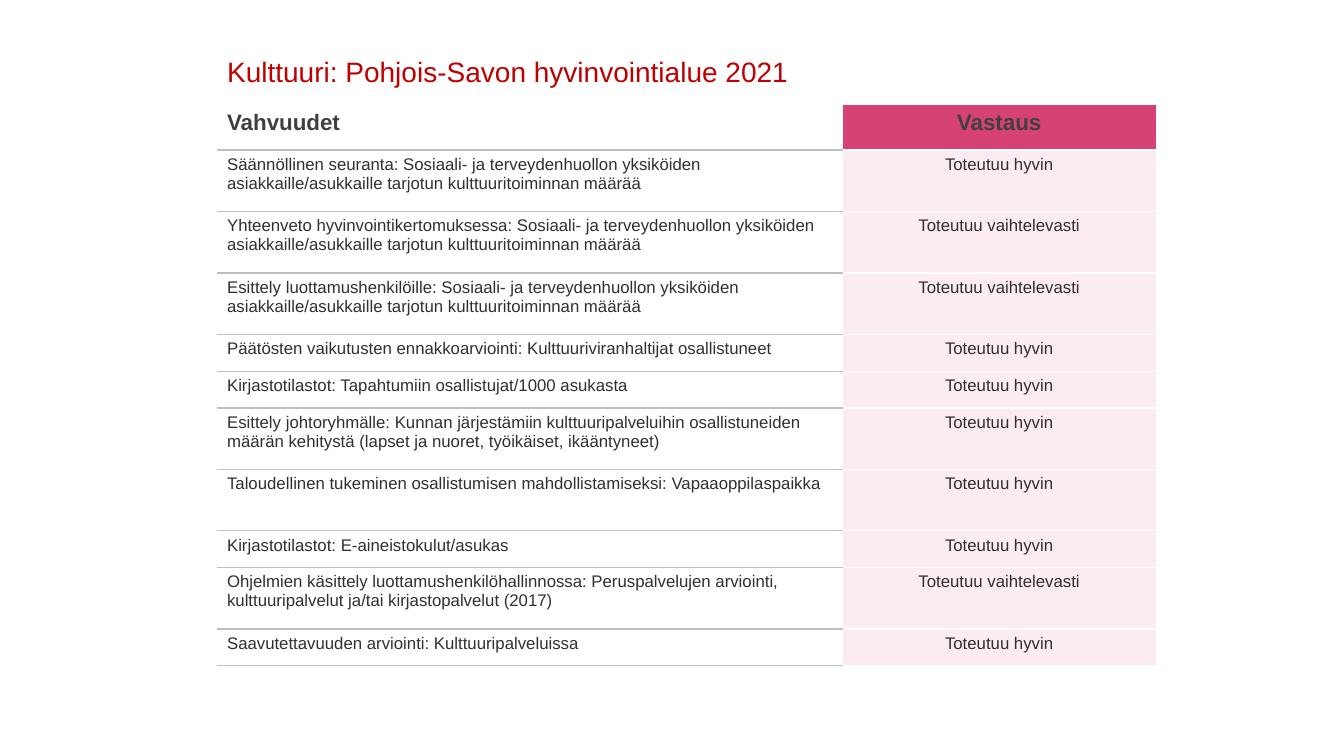
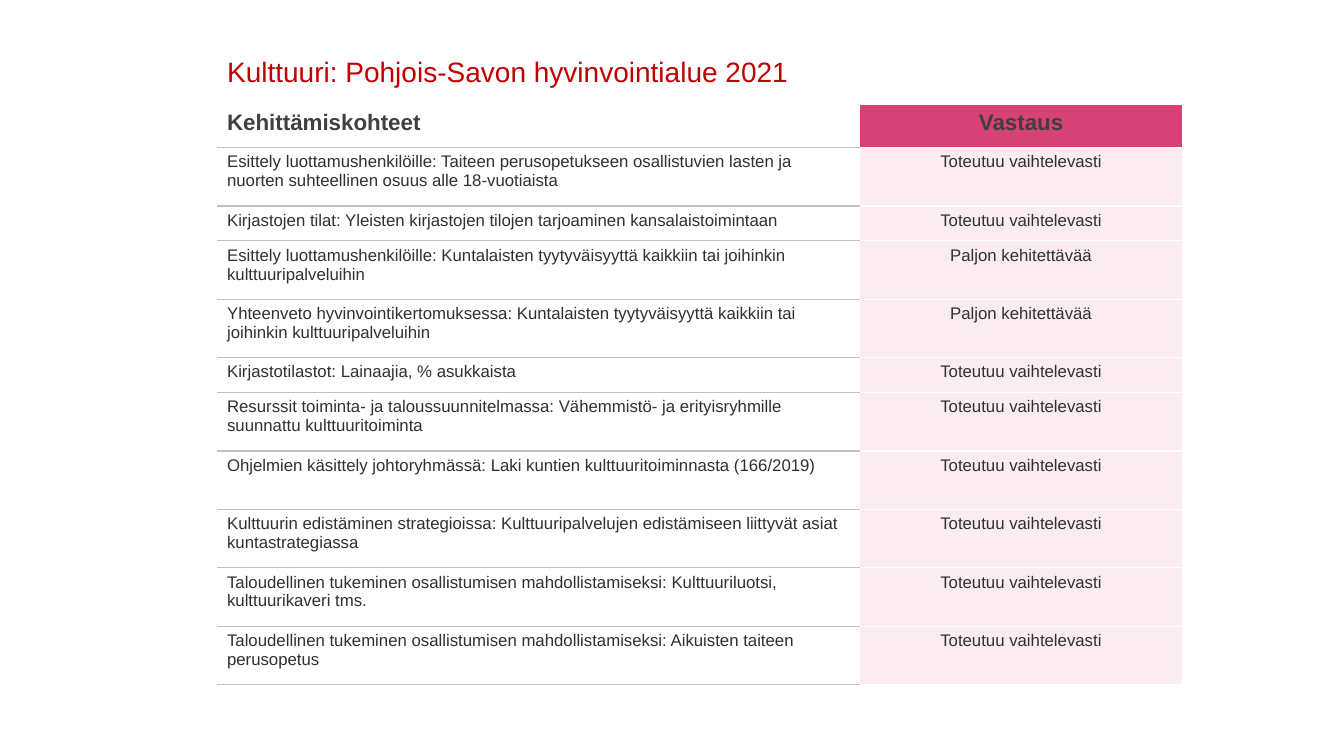
from lxml import etree
from pptx import Presentation
from pptx.dml.color import RGBColor
from pptx.enum.text import MSO_ANCHOR, MSO_AUTO_SIZE, PP_ALIGN
from pptx.oxml.ns import qn
from pptx.util import Pt

TOP, FIXED = MSO_ANCHOR.TOP, MSO_AUTO_SIZE.NONE
LEFT, CENTER = PP_ALIGN.LEFT, PP_ALIGN.CENTER

# Colours
RED = RGBColor(0xC0, 0x00, 0x00)
DARK = RGBColor(0x40, 0x40, 0x40)
TEXT = RGBColor(0x30, 0x30, 0x30)
GRAY = RGBColor(0xC0, 0xC0, 0xC0)
WHITE = RGBColor(0xFF, 0xFF, 0xFF)
PINK = RGBColor(0xD6, 0x41, 0x76)
PALE = RGBColor(0xFB, 0xEC, 0xF1)

# Text formats
TITLE = dict(size=Pt(20), bold=False, color=RED)
HEAD = dict(size=Pt(16), bold=True, color=DARK)
BODY = dict(size=Pt(12), bold=False, color=TEXT)

# Shared layout
EDGE = Pt(155)
HEADING = "Kulttuuri: Pohjois-Savon hyvinvointialue 2021"
GOOD = "Toteutuu hyvin"
MIXED = "Toteutuu vaihtelevasti"
POOR = "Paljon kehitettävää"

# Each row: topic, answer, whether the row is tall
STRONG = [
    ("Säännöllinen seuranta: Sosiaali- ja terveydenhuollon yksiköiden "
     "asiakkaille/asukkaille tarjotun kulttuuritoiminnan määrää", GOOD, True),
    ("Yhteenveto hyvinvointikertomuksessa: Sosiaali- ja terveydenhuollon yksiköiden "
     "asiakkaille/asukkaille tarjotun kulttuuritoiminnan määrää", MIXED, True),
    ("Esittely luottamushenkilöille: Sosiaali- ja terveydenhuollon yksiköiden "
     "asiakkaille/asukkaille tarjotun kulttuuritoiminnan määrää", MIXED, True),
    ("Päätösten vaikutusten ennakkoarviointi: Kulttuuriviranhaltijat osallistuneet",
     GOOD, False),
    ("Kirjastotilastot: Tapahtumiin osallistujat/1000 asukasta", GOOD, False),
    ("Esittely johtoryhmälle: Kunnan järjestämiin kulttuuripalveluihin osallistuneiden "
     "määrän kehitystä (lapset ja nuoret, työikäiset, ikääntyneet)", GOOD, True),
    ("Taloudellinen tukeminen osallistumisen mahdollistamiseksi: Vapaaoppilaspaikka",
     GOOD, True),
    ("Kirjastotilastot: E-aineistokulut/asukas", GOOD, False),
    ("Ohjelmien käsittely luottamushenkilöhallinnossa: Peruspalvelujen arviointi, "
     "kulttuuripalvelut ja/tai kirjastopalvelut (2017)", MIXED, True),
    ("Saavutettavuuden arviointi: Kulttuuripalveluissa", GOOD, False),
]
WEAK = [
    ("Esittely luottamushenkilöille: Taiteen perusopetukseen osallistuvien lasten ja "
     "nuorten suhteellinen osuus alle 18-vuotiaista", MIXED, True),
    ("Kirjastojen tilat: Yleisten kirjastojen tilojen tarjoaminen kansalaistoimintaan",
     MIXED, False),
    ("Esittely luottamushenkilöille: Kuntalaisten tyytyväisyyttä kaikkiin tai joihinkin "
     "kulttuuripalveluihin", POOR, True),
    ("Yhteenveto hyvinvointikertomuksessa: Kuntalaisten tyytyväisyyttä kaikkiin tai "
     "joihinkin kulttuuripalveluihin", POOR, True),
    ("Kirjastotilastot: Lainaajia, % asukkaista", MIXED, False),
    ("Resurssit toiminta- ja taloussuunnitelmassa: Vähemmistö- ja erityisryhmille "
     "suunnattu kulttuuritoiminta", MIXED, True),
    ("Ohjelmien käsittely johtoryhmässä: Laki kuntien kulttuuritoiminnasta (166/2019)",
     MIXED, True),
    ("Kulttuurin edistäminen strategioissa: Kulttuuripalvelujen edistämiseen liittyvät "
     "asiat kuntastrategiassa", MIXED, True),
    ("Taloudellinen tukeminen osallistumisen mahdollistamiseksi: Kulttuuriluotsi, "
     "kulttuurikaveri tms.", MIXED, True),
    ("Taloudellinen tukeminen osallistumisen mahdollistamiseksi: Aikuisten taiteen "
     "perusopetus", MIXED, True),
]

# Heights are header, tall row, short row
SLIDES = [
    dict(label="Vahvuudet", rows=STRONG, wide=447, heights=(32.2, 43.9, 26.3)),
    dict(label="Kehittämiskohteet", rows=WEAK, wide=459.5, heights=(30.4, 41.7, 25)),
]


def write(frame, text, style, align):
    """Put one formatted paragraph in a text frame."""
    para = frame.paragraphs[0]
    para.alignment = align
    run = para.add_run()
    run.text = text
    run.font.name = "Arial"
    for name, value in style.items():
        if name == "color":
            run.font.color.rgb = value
        else:
            setattr(run.font, name, value)


def add_title(slide):
    """Place and format the title placeholder."""
    title = slide.shapes.title
    box = dict(left=EDGE, top=Pt(35), width=Pt(570), height=Pt(40))
    for name, value in box.items():
        setattr(title, name, value)
    frame = title.text_frame
    frame.auto_size = FIXED
    frame.vertical_anchor = TOP
    write(frame, HEADING, TITLE, LEFT)


def rule(cell, edges):
    """Draw the given cell edges; an edge without a colour is hidden."""
    props = cell._tc.get_or_add_tcPr()
    for i, (side, color) in enumerate(edges.items()):
        line = etree.Element(qn("a:ln" + side), w=str(Pt(1)))
        if color is None:
            etree.SubElement(line, qn("a:noFill"))
        else:
            fill = etree.SubElement(line, qn("a:solidFill"))
            etree.SubElement(fill, qn("a:srgbClr"), val=str(color))
        props.insert(i, line)


def fill_row(table, i, texts, style, shade):
    """Fill a row: topic on white, answer on a shade."""
    looks = [(LEFT, WHITE, GRAY), (CENTER, shade, WHITE)]
    for j, (text, (align, back, line)) in enumerate(zip(texts, looks)):
        cell = table.cell(i, j)
        cell.vertical_anchor = TOP
        cell.fill.solid()
        cell.fill.fore_color.rgb = back
        write(cell.text_frame, text, style, align)
        rule(cell, dict(L=None, R=None, T=line if i else None, B=line))


def add_grid(slide, label, rows, wide, heights):
    """Add the table of topics and answers."""
    head, tall, short = heights
    sizes = [head] + [tall if big else short for _, _, big in rows]
    table = slide.shapes.add_table(
        len(sizes), 2, EDGE, Pt(75), Pt(wide * 1.5), Pt(sum(sizes))).table
    table.first_row = table.horz_banding = False
    for col, width in zip(table.columns, (wide, wide / 2)):
        col.width = Pt(width)
    for row, height in zip(table.rows, sizes):
        row.height = Pt(height)
    fill_row(table, 0, (label, "Vastaus"), HEAD, PINK)
    for i, (topic, answer, _) in enumerate(rows, 1):
        fill_row(table, i, (topic, answer), BODY, PALE)


def main():
    deck = Presentation()
    deck.slide_width, deck.slide_height = Pt(960), Pt(540)
    for data in SLIDES:
        slide = deck.slides.add_slide(deck.slide_layouts[5])
        add_title(slide)
        add_grid(slide, **data)
    deck.save("out.pptx")


if __name__ == "__main__":
    main()
